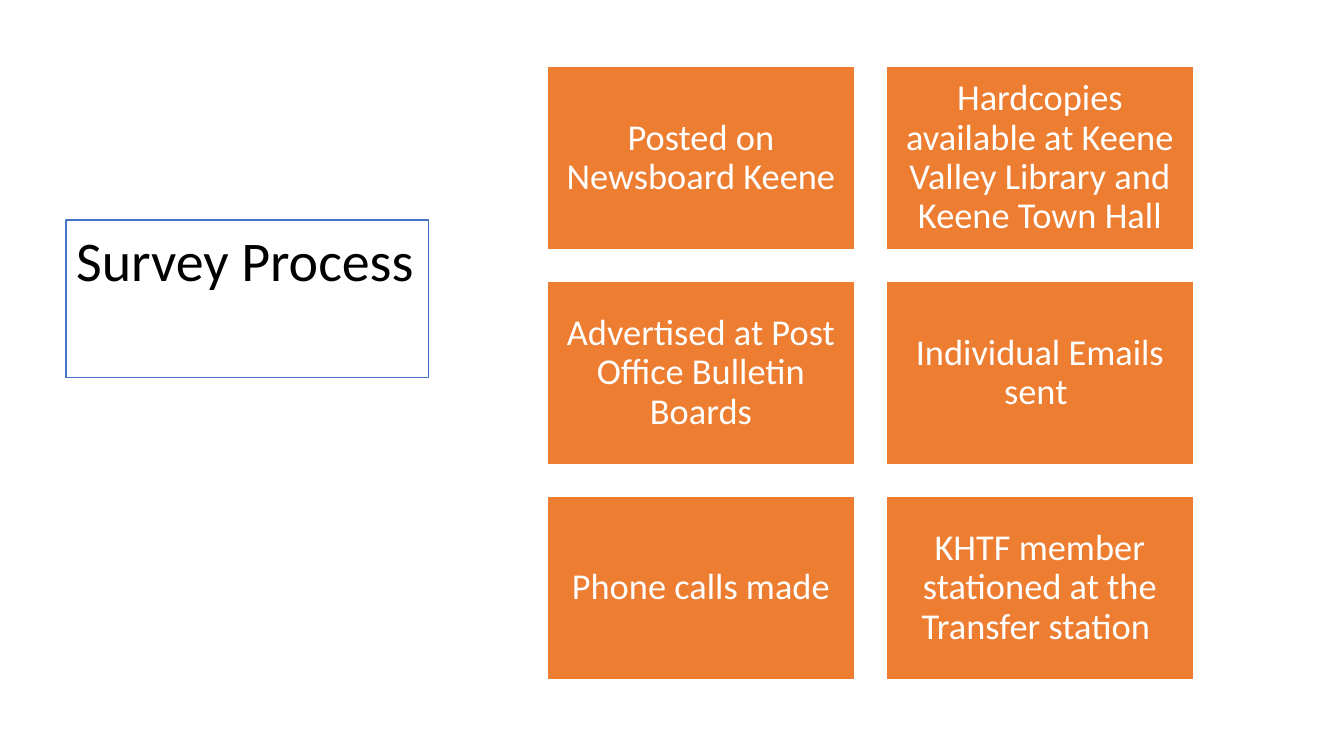
from pptx import Presentation
from pptx.dml.color import RGBColor
from pptx.enum.shapes import MSO_SHAPE as Shape
from pptx.enum.text import MSO_ANCHOR as Anchor, MSO_AUTO_SIZE as AutoSize, PP_ALIGN as Align
from pptx.util import Emu, Pt

EMU_PER_PX = 914400 / 100.8
FONT = "Calibri"
WHITE, BLACK, ORANGE, BLUE = "FFFFFF", "000000", "ED7D31", "4472C4"

STEPS = [
    "Posted on Newsboard Keene",
    "Hardcopies available at Keene Valley Library and Keene Town Hall",
    "Advertised at Post Office Bulletin Boards",
    "Individual Emails sent ",
    "Phone calls made",
    "KHTF member stationed at the Transfer station ",
]
COLUMNS = 2
GRID_LEFT, GRID_TOP = 547, 66
TILE_WIDTH, TILE_HEIGHT = 308, 184
COLUMN_STEP, ROW_STEP = 339, 215
TILE_INSET = 11


def px(length):
    return Emu(round(length * EMU_PER_PX))


def color(code):
    return RGBColor.from_string(code)


def paint(box, fill, line, width):
    box.fill.solid()
    box.fill.fore_color.rgb = color(fill)
    box.line.color.rgb = color(line)
    box.line.width = Pt(width)


def write(box, text, size, ink, align, spacing):
    para = box.text_frame.paragraphs[0]
    para.alignment = align
    para.line_spacing = spacing
    span = para.add_run()
    span.text = text
    span.font.name = FONT
    span.font.size = Pt(size)
    span.font.color.rgb = color(ink)


def add_title(page, text):
    box = page.shapes.title
    box.left, box.top, box.width, box.height = px(66), px(220), px(363), px(78)
    paint(box, WHITE, BLUE, 0.75)
    frame = box.text_frame
    frame.word_wrap = True
    frame.auto_size = AutoSize.SHAPE_TO_FIT_TEXT
    frame.vertical_anchor = Anchor.TOP
    write(box, text, 40, BLACK, Align.LEFT, 1.0)


def add_tile(page, left, top, text):
    box = page.shapes.add_shape(
        Shape.RECTANGLE, px(left), px(top), px(TILE_WIDTH), px(TILE_HEIGHT))
    box.shadow.inherit = False
    paint(box, ORANGE, WHITE, 1)
    frame = box.text_frame
    frame.word_wrap = True
    frame.vertical_anchor = Anchor.MIDDLE
    frame.margin_left = frame.margin_right = px(TILE_INSET)
    frame.margin_top = frame.margin_bottom = px(TILE_INSET)
    write(box, text, 26, WHITE, Align.CENTER, 0.9)


def main():
    deck = Presentation()
    deck.slide_width, deck.slide_height = px(1344), px(756)
    page = deck.slides.add_slide(deck.slide_layouts.get_by_name("Title Only"))
    add_title(page, "Survey Process")
    for index, step in enumerate(STEPS):
        row, column = divmod(index, COLUMNS)
        add_tile(page, GRID_LEFT + column * COLUMN_STEP, GRID_TOP + row * ROW_STEP, step)
    deck.save("out.pptx")


if __name__ == "__main__":
    main()
